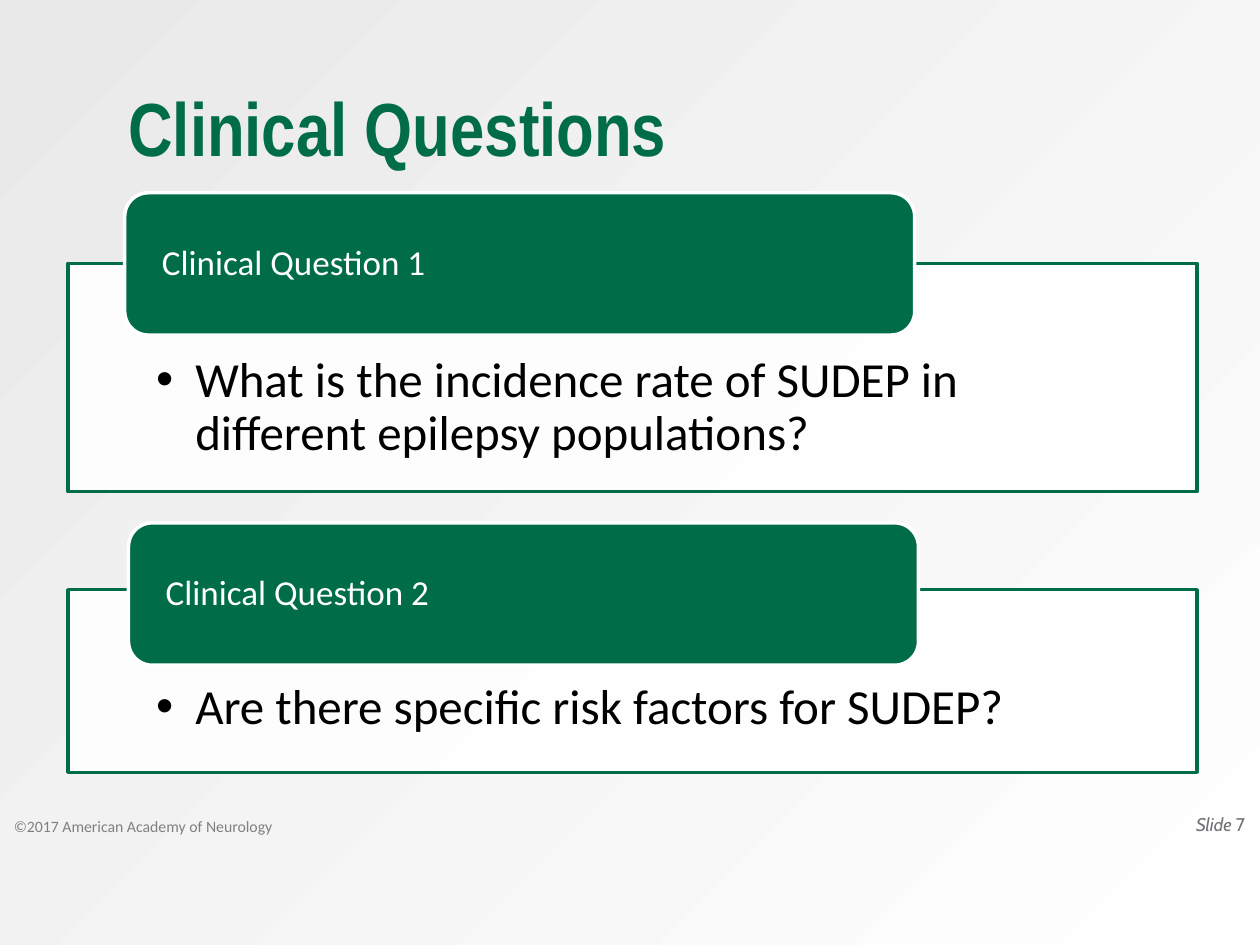
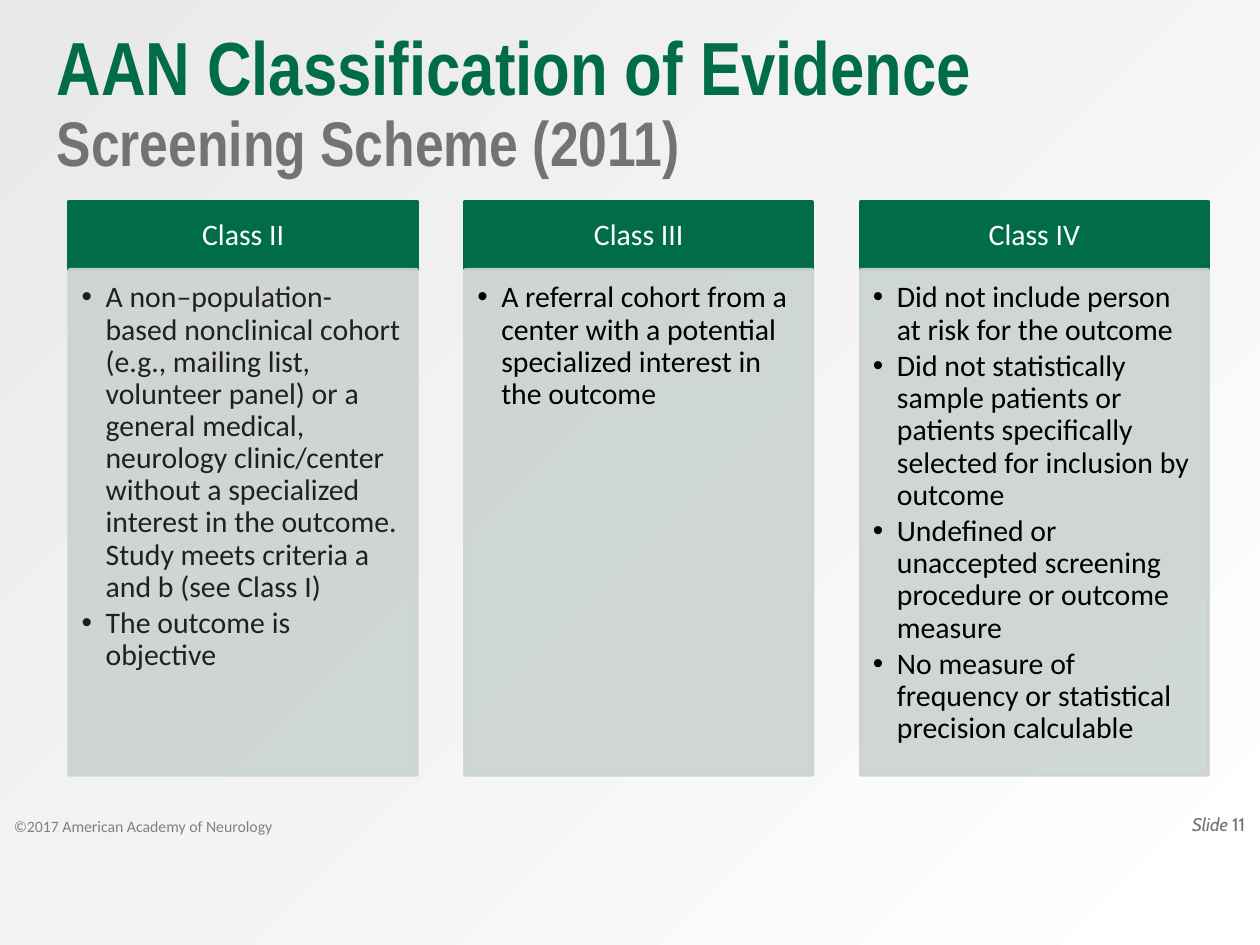
from dataclasses import dataclass

from lxml.etree import SubElement
from pptx import Presentation
from pptx.dml.color import RGBColor as RGB
from pptx.enum.shapes import MSO_SHAPE as SHAPE
from pptx.enum.text import MSO_ANCHOR as ANCHOR, PP_ALIGN as ALIGN
from pptx.oxml.ns import qn
from pptx.util import Inches, Pt


@dataclass(frozen=True)
class Theme:
    green: str = "006D48"
    gray: str = "727277"
    footer_gray: str = "808080"
    panel: str = "CCD4CF"
    white: str = "FFFFFF"
    black: str = "000000"
    ink: str = "231F20"
    shade: str = "E9E9EA"
    title_font: str = "Arial Narrow"
    body_font: str = "Calibri"
    number_font: str = "Cabin"
    title: float = 43
    subtitle: float = 36
    question: float = 28
    tag: float = 20
    column: float = 17
    number: float = 10.5
    footer: float = 9
    line: float = 2
    leading: float = 0.9
    alpha: int = 90


T = Theme()
FOOTER = "©2017 American Academy of Neurology"

QUESTIONS = {
    "number": 7,
    "title": ("Clinical Questions", None),
    "title_at": (1.02, 0.61, 8.96, 0.78),
    "cards": [
        {"tag": "Clinical Question 1", "tag_at": (0.99, 1.53), "top": 2.09, "height": 1.81,
         "text": "What is the incidence rate of SUDEP in different epilepsy populations?"},
        {"tag": "Clinical Question 2", "tag_at": (1.02, 4.15), "top": 4.68, "height": 1.45,
         "text": "Are there specific risk factors for SUDEP?"},
    ],
}

EVIDENCE = {
    "number": 11,
    "title": ("AAN Classification of Evidence", "Screening Scheme (2011)"),
    "title_at": (0.45, 0.33, 8.96, 1.12),
    "columns": [
        ("Class II", T.ink, [
            "A non–population-based nonclinical cohort (e.g., mailing list, volunteer panel) "
            "or a general medical, neurology clinic/center without a specialized interest in "
            "the outcome. Study meets criteria a and b (see Class I)",
            "The outcome is objective",
        ]),
        ("Class III", T.black, [
            "A referral cohort from a center with a potential specialized interest in the outcome",
        ]),
        ("Class IV", T.black, [
            "Did not include person at risk for the outcome",
            "Did not statistically sample patients or patients specifically selected for "
            "inclusion by outcome",
            "Undefined or unaccepted screening procedure or outcome measure",
            "No measure of frequency or statistical precision calculable",
        ]),
    ],
}

CARD_LEFT, CARD_WIDTH = 0.54, 8.96
TAG_SIZE = (6.27, 1.13)
COL_LEFT, COL_WIDTH, COL_GAP = 0.55, 2.76, 0.38
HEAD_TOP, HEAD_HEIGHT, BODY_HEIGHT = 1.6, 0.54, 4.01


def frame(sp, inset, anchor):
    tf = sp.text_frame
    tf.word_wrap = True
    tf.vertical_anchor = anchor
    tf.margin_left, tf.margin_top, tf.margin_right, tf.margin_bottom = map(Inches, inset)
    return tf


def add_text(s, at, inset=(0, 0.02, 0, 0.02), anchor=ANCHOR.BOTTOM):
    return frame(s.shapes.add_textbox(*map(Inches, at)), inset, anchor)


def add_run(p, text, size, color, font=T.body_font, bold=False, italic=False):
    r = p.add_run()
    r.text = text
    r.font.name, r.font.size = font, Pt(size)
    r.font.bold, r.font.italic = bold, italic
    r.font.color.rgb = RGB.from_string(color)


def set_alpha(container):
    for clr in container.iter(qn("a:srgbClr")):
        SubElement(clr, qn("a:alpha"), val=str(T.alpha * 1000))


def add_block(s, kind, at, fill, line, inset, anchor=ANCHOR.TOP):
    sp = s.shapes.add_shape(kind, *map(Inches, at))
    sp.shadow.inherit = False
    sp.fill.solid()
    sp.fill.fore_color.rgb = RGB.from_string(fill)
    sp.line.color.rgb = RGB.from_string(line)
    sp.line.width = Pt(T.line)
    return sp, frame(sp, inset, anchor)


def add_bullets(tf, items, size, color, indent):
    for i, item in enumerate(items):
        p = tf.paragraphs[0] if i == 0 else tf.add_paragraph()
        pPr = p._p.get_or_add_pPr()
        pPr.set("marL", str(Inches(indent)))
        pPr.set("indent", str(-Inches(indent)))
        SubElement(pPr, qn("a:buFont"), typeface="Arial")
        SubElement(pPr, qn("a:buChar"), char="•")
        p.alignment = ALIGN.LEFT
        p.line_spacing = T.leading
        p.space_after = Pt(round(size * 0.15, 1))
        add_run(p, item, size, color)


def add_label(tf, text, size, align):
    p = tf.paragraphs[0]
    p.alignment, p.line_spacing = align, T.leading
    add_run(p, text, size, T.white)


def set_background(master):
    fill = master.background.fill
    fill.gradient()
    for stop, color, pos in zip(fill.gradient_stops, (T.white, T.shade), (0, 1)):
        stop.color.rgb = RGB.from_string(color)
        stop.position = pos
    lin = next(master.element.iter(qn("a:lin")))
    grad = lin.getparent()
    grad.remove(lin)
    focus = SubElement(grad, qn("a:path"), path="circle")
    SubElement(focus, qn("a:fillToRect"), l="100000", t="100000")


def add_slide(prs, data):
    s = prs.slides.add_slide(prs.slide_layouts[6])
    p = add_text(s, (0.11, 5.65, 6, 1)).paragraphs[0]
    add_run(p, FOOTER, T.footer, T.footer_gray)

    title, subtitle = data["title"]
    p = add_text(s, data["title_at"]).paragraphs[0]
    p.line_spacing = T.leading
    add_run(p, title, T.title, T.green, T.title_font, bold=True)
    if subtitle:
        p.add_line_break()
        add_run(p, subtitle, T.subtitle, T.gray, T.title_font, bold=True)

    p = add_text(s, (7.65, 6.34, 2.33, 0.4), (0.1, 0.05, 0.1, 0.05), ANCHOR.MIDDLE).paragraphs[0]
    p.alignment = ALIGN.RIGHT
    add_run(p, "Slide ", T.number, T.gray, T.number_font, italic=True)
    add_run(p, str(data["number"]), T.number, T.gray, T.number_font)
    return s


def build_questions(prs):
    s = add_slide(prs, QUESTIONS)
    for card in QUESTIONS["cards"]:
        at = (CARD_LEFT, card["top"], CARD_WIDTH, card["height"])
        sp, tf = add_block(s, SHAPE.RECTANGLE, at, T.white, T.green, (0.7, 0.73, 0.7, 0.22))
        set_alpha(sp.element.spPr.find(qn("a:solidFill")))
        add_bullets(tf, [card["text"]], T.question, T.black, 0.31)
        _, tf = add_block(s, SHAPE.ROUNDED_RECTANGLE, card["tag_at"] + TAG_SIZE,
                          T.green, T.white, (0.24, 0, 0.24, 0), ANCHOR.MIDDLE)
        add_label(tf, card["tag"], T.tag, ALIGN.LEFT)


def build_evidence(prs):
    s = add_slide(prs, EVIDENCE)
    for i, (head, color, items) in enumerate(EVIDENCE["columns"]):
        x = COL_LEFT + i * (COL_WIDTH + COL_GAP)
        _, tf = add_block(s, SHAPE.RECTANGLE, (x, HEAD_TOP, COL_WIDTH, HEAD_HEIGHT),
                          T.green, T.green, (0.13, 0.08, 0.13, 0.08), ANCHOR.MIDDLE)
        add_label(tf, head, T.column, ALIGN.CENTER)
        at = (x, HEAD_TOP + HEAD_HEIGHT, COL_WIDTH, BODY_HEIGHT)
        sp, tf = add_block(s, SHAPE.RECTANGLE, at, T.panel, T.panel, (0.1, 0.1, 0.13, 0.15))
        set_alpha(sp.element.spPr)
        add_bullets(tf, items, T.column, color, 0.19)


def main():
    prs = Presentation()
    prs.slide_width, prs.slide_height = Inches(10), Inches(7.5)
    set_background(prs.slide_master)
    build_questions(prs)
    build_evidence(prs)
    prs.save("out.pptx")


if __name__ == "__main__":
    main()
